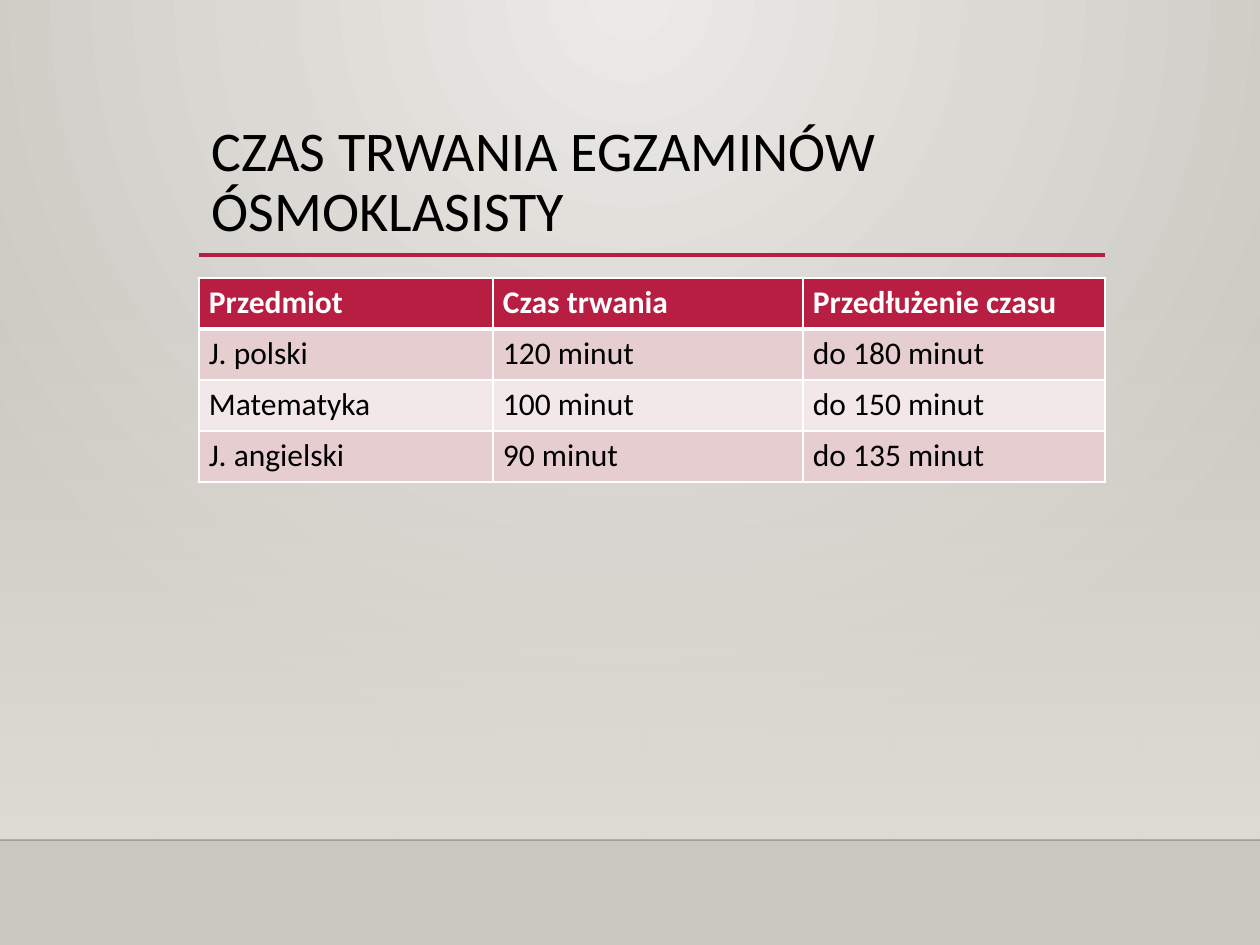
from dataclasses import dataclass

from lxml import etree
from pptx import Presentation
from pptx.dml.color import RGBColor
from pptx.enum.shapes import MSO_CONNECTOR, MSO_SHAPE
from pptx.enum.text import MSO_ANCHOR
from pptx.oxml import parse_xml
from pptx.oxml.ns import nsdecls, qn
from pptx.util import Pt

LINE = MSO_CONNECTOR.STRAIGHT
RECT = MSO_SHAPE.RECTANGLE
MIDDLE = MSO_ANCHOR.MIDDLE
SCALE = 914400 / 126  # EMU in one px
WIDE, HIGH = 1260, 945


@dataclass(frozen=True)
class Theme:
    font: str = "Calibri"
    head: int = 32
    body: int = 18
    ink: str = "000000"
    white: str = "FFFFFF"
    red: str = "B71E42"
    edge: str = "000001"
    glow: str = "ECEAE7"
    dusk: str = "CAC7C1"
    wall: str = "DFDBD5"
    bands: tuple = ("E6CDCF", "F3E8E9")


THEME = Theme()
TITLE = "CZAS TRWANIA EGZAMINÓW ÓSMOKLASISTY"
COLS = (294, 310, 302)
ROWS = (
    ("Przedmiot", "Czas trwania", "Przedłużenie czasu"),
    ("J. polski", "120 minut", "do 180 minut"),
    ("Matematyka", "100 minut", "do 150 minut"),
    ("J. angielski", "90 minut", "do 135 minut"),
)


def px(num):
    return round(num * SCALE)


def rgb(color):
    return RGBColor.from_string(color)


def write(frame, text, size=THEME.body, color=THEME.ink, bold=False, space=None):
    para = frame.paragraphs[0]
    para.line_spacing = space
    run = para.add_run()
    run.text = text
    font = run.font
    font.name, font.size, font.bold = THEME.font, Pt(size), bold
    font.color.rgb = rgb(color)


def blend(start, end, shape, alpha=100):
    """Gradient from start, at the given opacity, to a solid end."""
    return (
        f'<a:gradFill {nsdecls("a")} rotWithShape="1"><a:gsLst>'
        f'<a:gs pos="0"><a:srgbClr val="{start}">'
        f'<a:alpha val="{alpha * 1000}"/></a:srgbClr></a:gs>'
        f'<a:gs pos="100000"><a:srgbClr val="{end}"/></a:gs>'
        f'</a:gsLst>{shape}</a:gradFill>'
    )


def rule(slide, left, top, width, color, weight, alpha=100):
    line = slide.shapes.add_connector(
        LINE, px(left), px(top), px(left + width), px(top))
    line.line.color.rgb = rgb(color)
    line.line.width = Pt(weight)
    tint = line.line._ln.find(".//" + qn("a:srgbClr"))
    etree.SubElement(tint, qn("a:alpha"), val=str(alpha * 1000))
    etree.SubElement(line._element.spPr, qn("a:effectLst"))


def backdrop(slide, left, top, width, height):
    # Round glow from the top centre
    ring = ('<a:path path="circle"><a:fillToRect l="43000" t="0" '
            'r="43000" b="100000"/></a:path>')
    back = parse_xml(
        f'<p:bg {nsdecls("p", "a")}><p:bgPr>'
        f'{blend(THEME.glow, THEME.dusk, ring)}<a:effectLst/></p:bgPr></p:bg>')
    slide._element.cSld.insert(0, back)
    # Wall that fades in downwards, and the floor edge
    wall = slide.shapes.add_shape(
        RECT, px(left), px(top + 277), px(width), px(height - 382))
    wall.shadow.inherit = False
    wall.line.fill.background()
    props = wall._element.spPr
    fade = blend(THEME.wall, THEME.wall, '<a:lin ang="5400000" scaled="0"/>', 0)
    props.insert(2, parse_xml(fade))
    rule(slide, left, top + height - 105, width, THEME.edge, 1, 20)


def heading(slide, left, top, width, height):
    title = slide.shapes.title
    title.left, title.top = px(left), px(top)
    title.width, title.height = px(width), px(height)
    frame = title.text_frame
    frame.word_wrap = True
    frame.vertical_anchor = MIDDLE
    write(frame, TITLE, size=THEME.head, space=0.9)
    frame.paragraphs[0].alignment = 1
    rule(slide, left, top + height - 1, width, THEME.red, 2.5)


def border(cell, row):
    """White grid, thicker where the header meets the body."""
    props = cell._tc.get_or_add_tcPr()
    thick = {"T": row == 1, "B": row == 0}
    for side in "LRTB":
        width = Pt(3 if thick.get(side) else 1)
        props.append(parse_xml(
            f'<a:ln{side} {nsdecls("a")} w="{width}"><a:solidFill>'
            f'<a:srgbClr val="{THEME.white}"/></a:solidFill></a:ln{side}>'))


def times(slide, left, top, width, height):
    table = slide.shapes.add_table(
        len(ROWS), len(COLS), px(left), px(top), px(width), px(height)).table
    for col, size in zip(table.columns, COLS):
        col.width = px(size)
    for r, texts in enumerate(ROWS):
        table.rows[r].height = px(height / len(ROWS))
        head = r == 0
        for c, text in enumerate(texts):
            cell = table.cell(r, c)
            border(cell, r)
            cell.fill.solid()
            cell.fill.fore_color.rgb = rgb(
                THEME.red if head else THEME.bands[(r - 1) % 2])
            cell.margin_left = cell.margin_right = px(10)
            cell.margin_top = cell.margin_bottom = px(6)
            write(cell.text_frame, text, bold=head,
                  color=THEME.white if head else THEME.ink)


def main():
    deck = Presentation()
    deck.slide_width, deck.slide_height = px(WIDE), px(HIGH)
    slide = deck.slides.add_slide(deck.slide_layouts[5])  # title only
    backdrop(slide, 0, 0, WIDE, HIGH)
    heading(slide, 199, 111, sum(COLS), 145)
    times(slide, 199, 278, sum(COLS), 204)
    deck.save("out.pptx")


if __name__ == "__main__":
    main()
